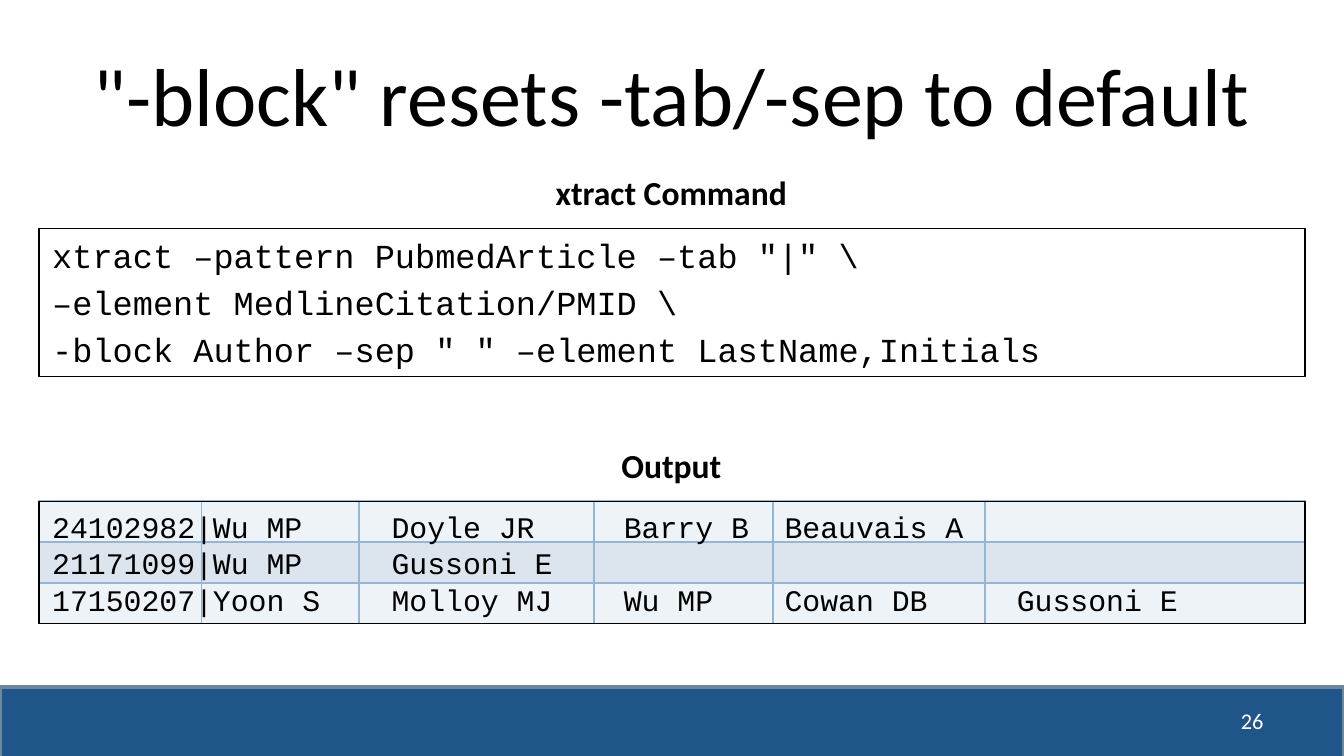
from lxml import etree
from pptx import Presentation
from pptx.dml.color import RGBColor
from pptx.enum.shapes import MSO_SHAPE
from pptx.enum.text import MSO_ANCHOR, PP_ALIGN
from pptx.oxml.ns import qn
from pptx.util import Inches, Pt

LEFT, WIDTH = 0.29, 9.42
CHAR_WIDTH = 9.57  # points, Courier New at 16 pt
TAB_COLUMNS = [19, 32, 41, 54]  # characters from the left edge
COLUMN_WIDTHS = [1.21, 1.17, 1.75, 1.33, 1.58, 2.38]
ROW_FILLS = ["EEF3F7", "DCE5EE", "EEF3F7"]

COMMAND = [
    'xtract –pattern PubmedArticle –tab "|" \\',
    "–element MedlineCitation/PMID \\",
    '-block Author –sep " " –element LastName,Initials',
]
OUTPUT = [
    ["24102982|Wu MP", "Doyle JR", "Barry B", "Beauvais A"],
    ["21171099|Wu MP", "Gussoni E"],
    ["17150207|Yoon S", "Molloy MJ", "Wu MP", "Cowan DB", "Gussoni E"],
]


def color(value):
    return RGBColor.from_string(value)


def set_font(para, name, size, value="000000", bold=False):
    font = para.font
    font.name, font.size, font.bold = name, Pt(size), bold
    font.color.rgb = color(value)


def add_label(page, box, text, size, align, value="000000", bold=False,
              anchor=MSO_ANCHOR.TOP):
    label = page.shapes.add_textbox(*map(Inches, box))
    frame = label.text_frame
    frame.word_wrap = True
    frame.vertical_anchor = anchor
    para = frame.paragraphs[0]
    para.text = text
    para.alignment = align
    set_font(para, "Calibri", size, value, bold)


def add_panel(page, box, fill, line, line_width):
    panel = page.shapes.add_shape(MSO_SHAPE.RECTANGLE, *map(Inches, box))
    panel.shadow.inherit = False
    if fill:
        panel.fill.solid()
        panel.fill.fore_color.rgb = color(fill)
    else:
        panel.fill.background()
    panel.line.color.rgb = color(line)
    panel.line.width = Pt(line_width)
    return panel


def add_tabs(para, columns):
    tabs = etree.SubElement(para._p.get_or_add_pPr(), qn("a:tabLst"))
    for column in columns:
        etree.SubElement(tabs, qn("a:tab"), pos=str(Pt(column * CHAR_WIDTH)), algn="l")


def add_code(page, box, lines, size, line_height, gap=0, fill=None, tabs=()):
    panel = add_panel(page, box, fill, "000000", 0.75)
    frame = panel.text_frame
    frame.word_wrap = True
    frame.vertical_anchor = MSO_ANCHOR.TOP
    frame.margin_top = Inches(0.05)
    for index, line in enumerate(lines):
        para = frame.paragraphs[0] if index == 0 else frame.add_paragraph()
        para.text = line
        para.alignment = PP_ALIGN.LEFT
        para.line_spacing = Pt(line_height)
        if index:
            para.space_before = Pt(gap)
        if tabs:
            add_tabs(para, tabs)
        set_font(para, "Courier New", size)


def style_cell(cell, fill):
    cell.margin_top = cell.margin_bottom = 0
    # A small end mark keeps the empty row at its set height
    etree.SubElement(cell.text_frame.paragraphs[0]._p, qn("a:endParaRPr"), sz="1000")
    properties = cell._tc.get_or_add_tcPr()
    for side in ("lnL", "lnR", "lnT", "lnB"):
        border = etree.SubElement(properties, qn("a:" + side), w=str(Pt(1)))
        paint = etree.SubElement(border, qn("a:solidFill"))
        etree.SubElement(paint, qn("a:srgbClr"), val="94B6D2")
    cell.fill.solid()
    cell.fill.fore_color.rgb = color(fill)


def add_grid(page, box):
    left, top, width, height = map(Inches, box)
    grid = page.shapes.add_table(len(ROW_FILLS), len(COLUMN_WIDTHS),
                                 left, top, width, height).table
    grid.first_row = grid.horz_banding = False
    for column, column_width in zip(grid.columns, COLUMN_WIDTHS):
        column.width = Inches(column_width)
    for row, fill in zip(grid.rows, ROW_FILLS):
        row.height = height // len(ROW_FILLS)
        for cell in row.cells:
            style_cell(cell, fill)


def add_heading(page, top, text):
    add_label(page, (3.95, top, 2.09, 0.4), text, 18, PP_ALIGN.CENTER, bold=True)


def add_footer(page, box):
    left, top, width, height = box
    add_panel(page, box, "20558A", "6D879B", 2)
    add_label(page, (left + 7.17, top + 0.1, 2.33, 0.3), "26", 12, PP_ALIGN.RIGHT,
              "FFFFFF", anchor=MSO_ANCHOR.MIDDLE)


def add_command(page, box):
    left, top, width, height = box
    add_heading(page, top - 0.47, "xtract Command")
    add_code(page, box, COMMAND, 18, 21.6, gap=3.6, fill="FFFFFF")


def add_output(page, box):
    left, top, width, height = box
    add_grid(page, box)
    add_heading(page, top - 0.47, "Output")
    lines = ["\t".join(names) for names in OUTPUT]
    add_code(page, box, lines, 16, 19.5, tabs=TAB_COLUMNS)


def main():
    deck = Presentation()
    deck.slide_width = Inches(10)
    deck.slide_height = deck.slide_width * 9 // 16
    page = deck.slides.add_slide(deck.slide_layouts[6])
    add_footer(page, (0, 5.11, 10, 0.58))
    add_label(page, (0.5, 0.23, 9, 0.94), '"-block" resets -tab/-sep to default',
              44, PP_ALIGN.CENTER, anchor=MSO_ANCHOR.MIDDLE)
    add_command(page, (LEFT, 1.7, WIDTH, 1.1))
    add_output(page, (LEFT, 3.73, WIDTH, 0.91))
    deck.save("out.pptx")


if __name__ == "__main__":
    main()
